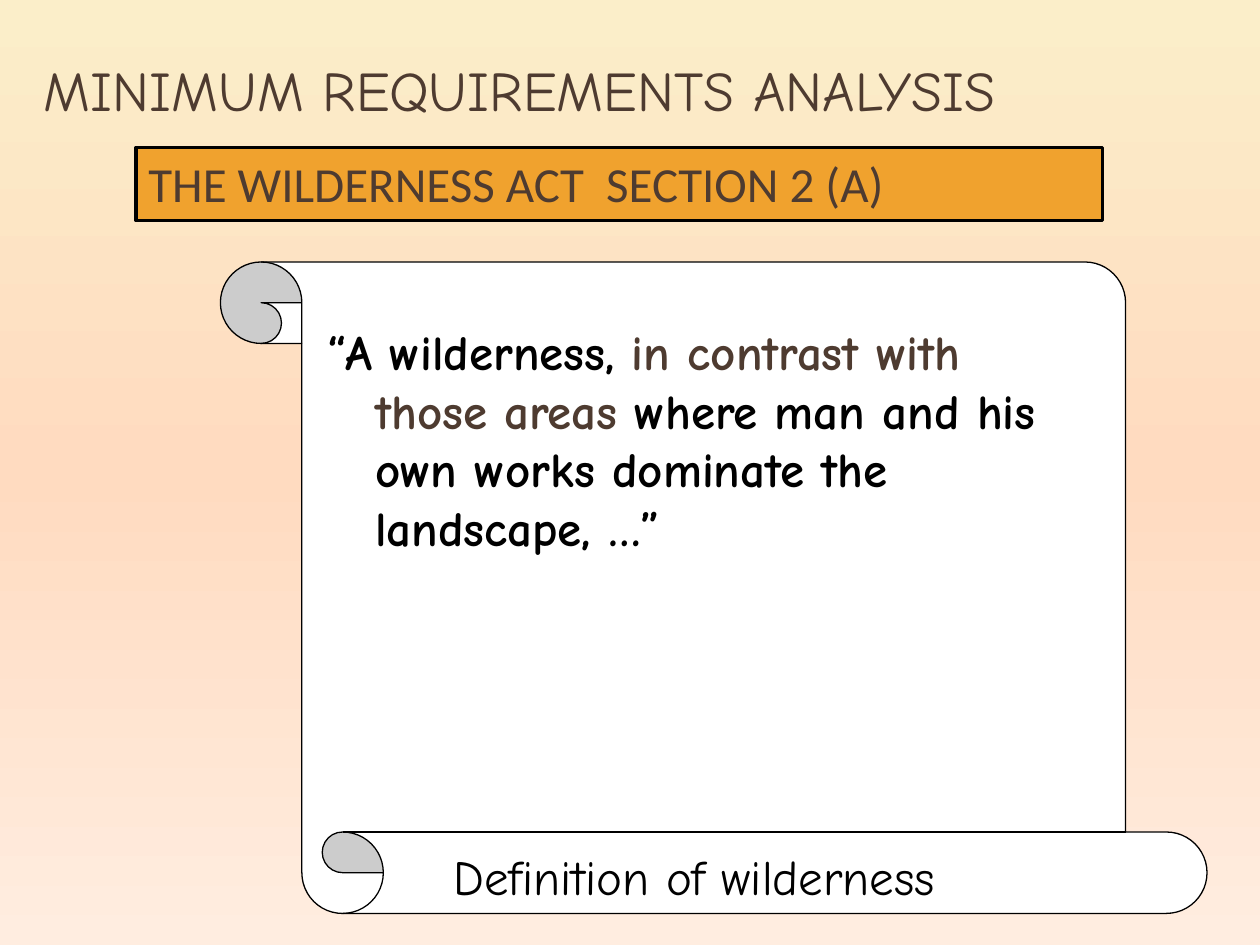
from copy import deepcopy

from pptx import Presentation
from pptx.dml.color import RGBColor
from pptx.enum.shapes import MSO_SHAPE
from pptx.enum.text import MSO_ANCHOR
from pptx.oxml.ns import qn
from pptx.util import Inches, Pt

COLORS = {
    "top": "FBEEC9",
    "middle": "FFDBC0",
    "bottom": "FFEDE0",
    "banner": "F0A22E",
    "brown": "4E3B30",
    "paper": "FFFFFF",
    "ink": "000000",
}
HAND_FONT = {"name": "Comic Neue", "size": Pt(28), "bold": False}
QUOTE_FONT = {**HAND_FONT, "bold": True}
HEADING_FONT = {**HAND_FONT, "size": Pt(32)}
BANNER_FONT = {**HAND_FONT, "name": "Calibri"}


def color(name):
    return RGBColor.from_string(COLORS[name])


def set_background(slide, names):
    fill = slide.background.fill
    fill.gradient()
    fill.gradient_angle = 270
    first_stop = next(slide.element.iter(qn("a:gs")))
    first_stop.addnext(deepcopy(first_stop))
    for index, (stop, name) in enumerate(zip(fill.gradient_stops, names)):
        stop.position = index / (len(names) - 1)
        stop.color.rgb = color(name)


def paint(shape, fill, line_width=None):
    shape.fill.solid()
    shape.fill.fore_color.rgb = color(fill)
    if line_width:
        shape.line.color.rgb = color("ink")
        shape.line.width = Pt(line_width)


def add_scroll(slide, box):
    scroll = slide.shapes.add_shape(MSO_SHAPE.VERTICAL_SCROLL, *map(Inches, box))
    scroll.shadow.inherit = False
    scroll.adjustments[0] = 0.125
    scroll.element.spPr.find(qn("a:xfrm")).set("flipV", "1")
    paint(scroll, "paper", 0.75)


def add_text(slide, box, runs, font, anchor=MSO_ANCHOR.TOP):
    text_box = slide.shapes.add_textbox(*map(Inches, box))
    frame = text_box.text_frame
    frame.word_wrap = True
    frame.vertical_anchor = anchor
    for text, color_name in runs:
        run = frame.paragraphs[0].add_run()
        run.text = text
        run.font.color.rgb = color(color_name)
        for attribute, value in font.items():
            setattr(run.font, attribute, value)
    return text_box


def hang_indent(text_box, indent):
    properties = text_box.text_frame.paragraphs[0]._p.get_or_add_pPr()
    properties.set("marL", str(Inches(indent)))
    properties.set("indent", str(-Inches(indent)))


def main():
    presentation = Presentation()
    presentation.slide_width = Inches(10)
    presentation.slide_height = Inches(7.5)
    slide = presentation.slides.add_slide(presentation.slide_layouts[6])
    set_background(slide, ["top", "middle", "bottom"])

    add_scroll(slide, (1.75, 2.08, 7.83, 5.17))

    banner = add_text(slide, (1.08, 1.17, 7.67, 0.58),
                      [("THE WILDERNESS ACT  SECTION 2 (A)", "brown")], BANNER_FONT)
    paint(banner, "banner", 2)

    quote = add_text(slide, (2.5, 2.5, 6.08, 3.75), [
        ("“A wilderness, ", "ink"),
        ("in contrast with those areas ", "brown"),
        ("where man and his own works dominate the landscape, …”", "ink"),
    ], QUOTE_FONT)
    paint(quote, "paper")
    hang_indent(quote, 0.38)

    add_text(slide, (3.5, 6.67, 5.75, 0.57),
             [("Definition of wilderness", "ink")], HAND_FONT)
    add_text(slide, (0.25, 0.25, 9.5, 0.92),
             [("MINIMUM REQUIREMENTS ANALYSIS", "brown")], HEADING_FONT, MSO_ANCHOR.MIDDLE)

    presentation.save("out.pptx")


if __name__ == "__main__":
    main()
